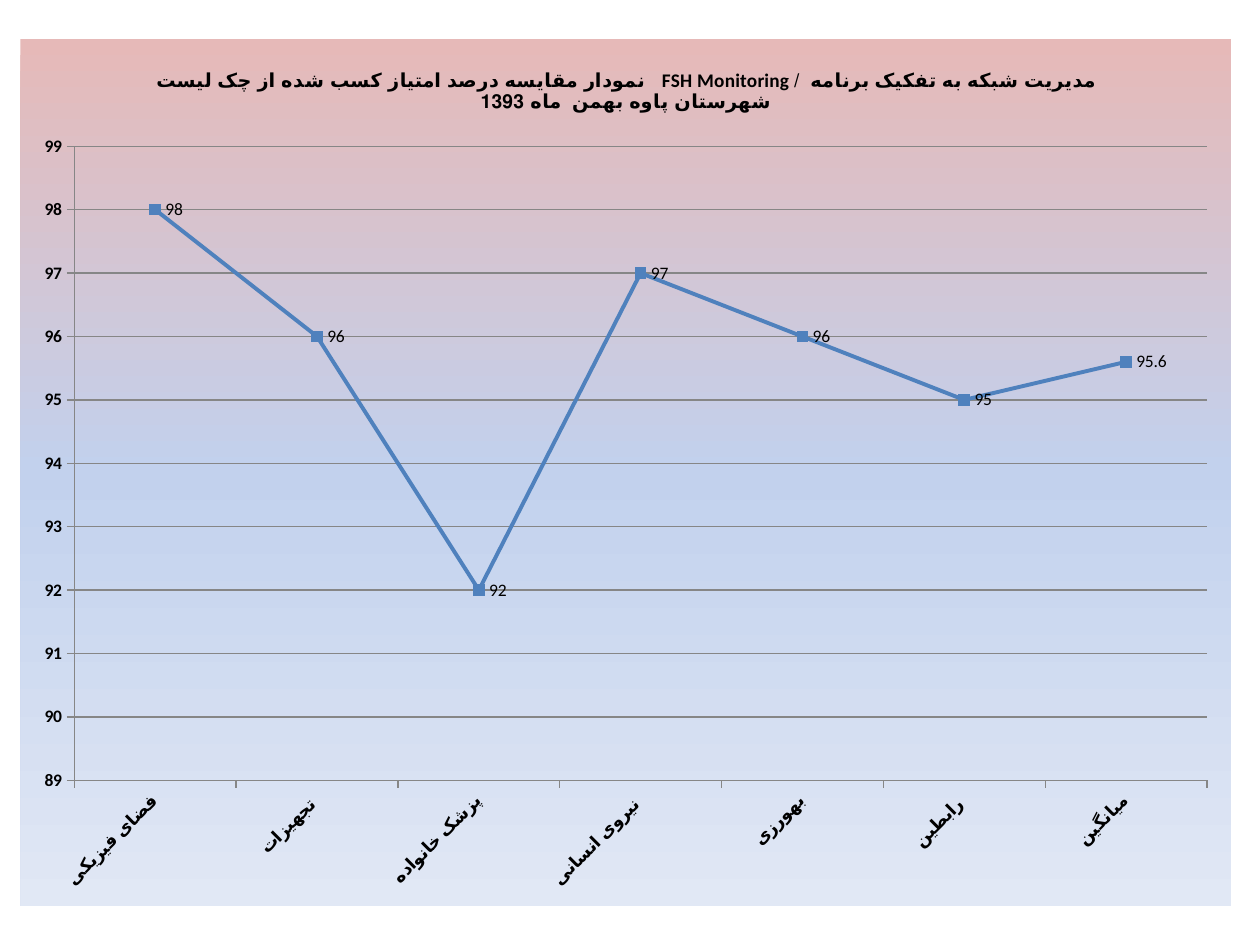
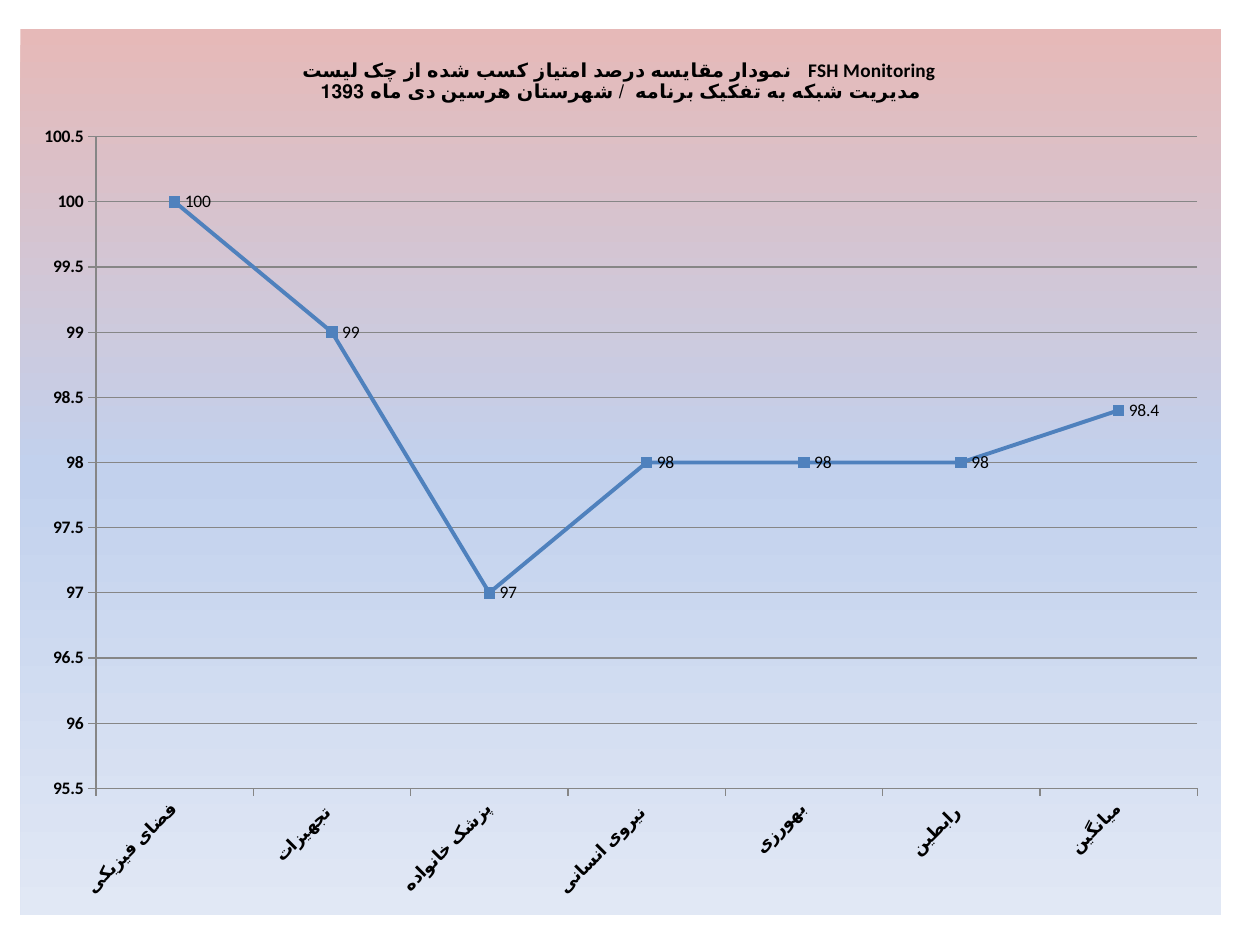
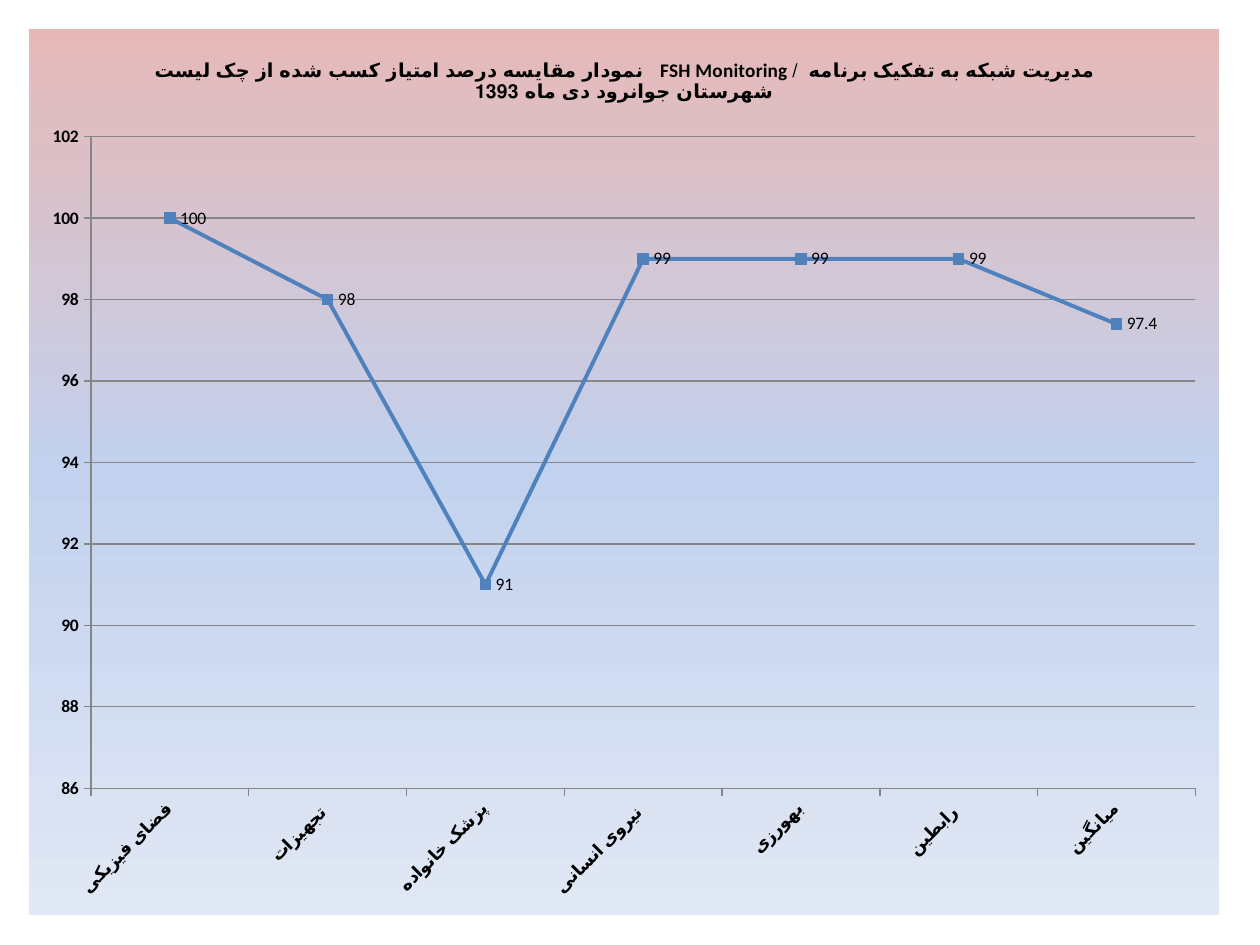
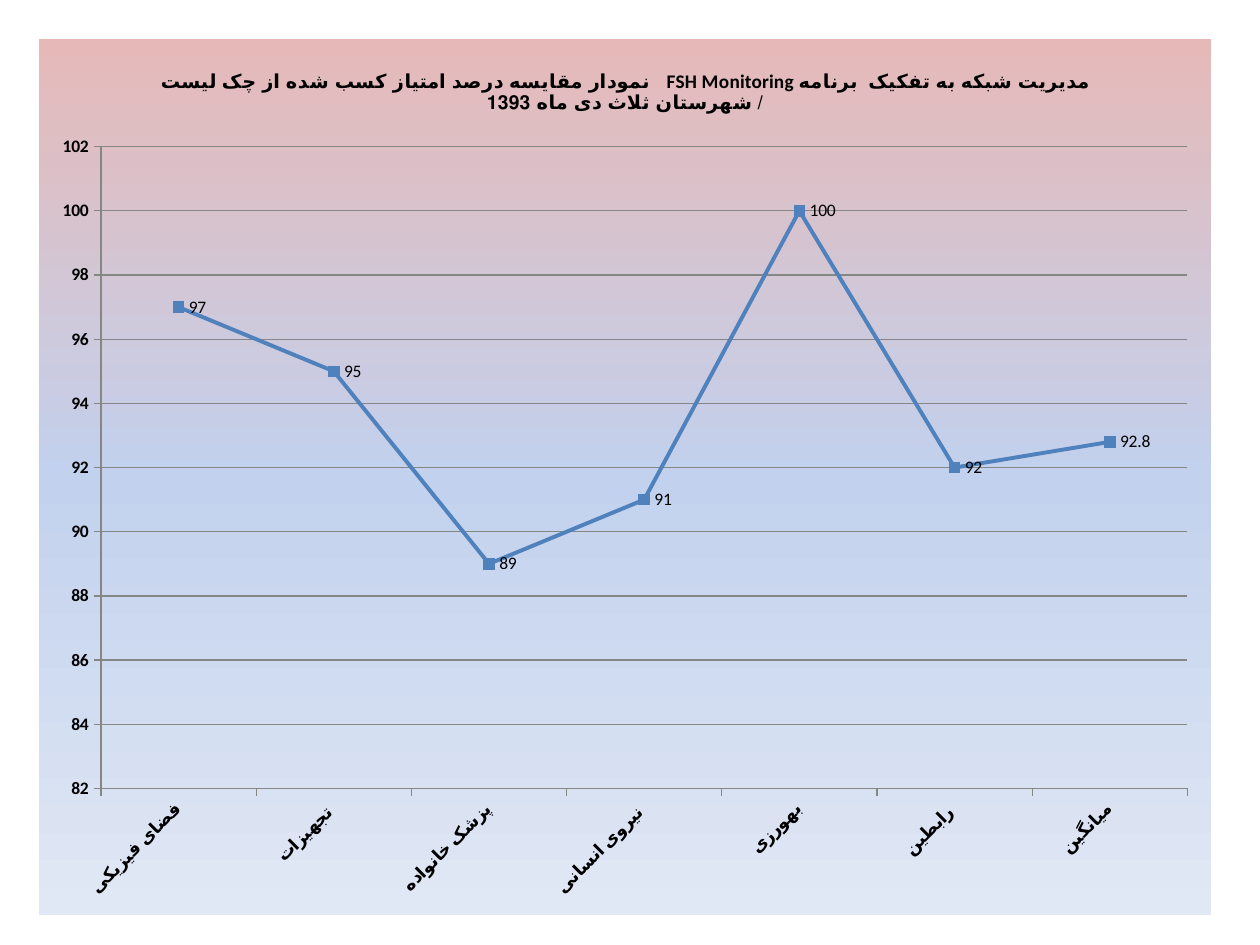
from lxml import etree
from pptx import Presentation
from pptx.chart.data import CategoryChartData as Data
from pptx.dml.color import RGBColor as RGB
from pptx.enum.chart import (XL_CHART_TYPE as Kind, XL_LABEL_POSITION as Spot,
                             XL_MARKER_STYLE as Mark, XL_TICK_MARK as Tick)
from pptx.oxml import parse_xml
from pptx.oxml.ns import nsdecls
from pptx.util import Cm, Pt

FONT = "Calibri"
BLACK, BLUE, GREY = "000000", "4F81BD", "868686"
STOPS = [(0, "E6B9B8"), (50, "C2D1ED"), (100, "E1E8F5")]

CATS = ["فضای فیزیکی", "تجهیزات ", "پزشک خانواده", "نیروی انسانی ",
        "بهورزی", "رابطین ", "میانگین"]
LEAD = "نمودار مقایسه درصد امتیاز کسب شده از چک لیست   FSH Monitoring "
TAIL = "مدیریت شبکه به تفکیک برنامه  / شهرستان "

# box in cm, town and month, title broken in two, scores, (low, high, step)
PAGES = [
    ((0.41, 0.79, 24.41, 17.48), "پاوه بهمن  ماه 1393", False,
     [98, 96, 92, 97, 96, 95, 95.6], (89, 99, 1)),
    ((0.41, 0.58, 24.21, 17.86), "هرسین دی ماه 1393", True,
     [100, 99, 97, 98, 98, 98, 98.4], (95.5, 100.5, 0.5)),
    ((0.58, 0.58, 24, 17.86), "جوانرود دی ماه 1393", False,
     [100, 98, 91, 99, 99, 99, 97.4], (86, 102, 2)),
    ((0.79, 0.79, 23.62, 17.65), "ثلاث دی ماه 1393", False,
     [97, 95, 89, 91, 100, 92, 92.8], (82, 102, 2)),
]


def tint(code):
    return RGB.from_string(code)


def style(font, size, bold=False):
    font.name, font.size, font.bold = FONT, Pt(size), bold
    font.color.rgb = tint(BLACK)


def stroke(line, code, width):
    line.color.rgb = tint(code)
    line.width = Pt(width)


def shade(chart):
    """Give the chart its gradient ground and leave the plot area clear."""
    stops = "".join(f'<a:gs pos="{at * 1000}"><a:srgbClr val="{code}"/></a:gs>'
                    for at, code in STOPS)
    ground = parse_xml(
        f'<c:spPr {nsdecls("c", "a")}><a:gradFill><a:gsLst>{stops}</a:gsLst>'
        '<a:lin ang="5400000" scaled="0"/></a:gradFill>'
        '<a:ln><a:noFill/></a:ln></c:spPr>')
    clear = parse_xml(f'<c:spPr {nsdecls("c", "a")}><a:noFill/></c:spPr>')
    root = chart.element.find("c:chart", chart.element.nsmap)
    root.addnext(ground)
    root.find("c:plotArea", root.nsmap).append(clear)


def head(chart, town, split):
    chart.has_title = True
    title = chart.chart_title
    title.include_in_layout = False
    frame = title.text_frame
    para = frame.paragraphs[0]
    for part in (LEAD, TAIL + town):
        run = para.add_run()
        run.text = part
        style(run.font, 11, True)
        if split and part == LEAD:
            para = frame.add_paragraph()


def axes(chart, scale):
    cat, val = chart.category_axis, chart.value_axis
    for axis in (cat, val):
        axis.major_tick_mark, axis.minor_tick_mark = Tick.OUTSIDE, Tick.NONE
        style(axis.tick_labels.font, 10, True)
        stroke(axis.format.line, GREY, 0.75)
    slant = cat.tick_labels.font._element.getroottree().getroot().find(
        ".//c:catAx/c:txPr/a:bodyPr", parse_xml(f'<a:p {nsdecls("a", "c")}/>').nsmap)
    slant.set("rot", "-2700000")
    slant.set("vert", "horz")
    val.minimum_scale, val.maximum_scale, val.major_unit = scale
    val.has_major_gridlines = True
    stroke(val.major_gridlines.format.line, GREY, 0.75)


def curve(plot):
    plot.vary_by_categories = False
    row = plot.series[0]
    row.smooth = False
    stroke(row.format.line, BLUE, 2.25)
    mark = row.marker
    mark.style, mark.size = Mark.SQUARE, 6
    mark.format.fill.solid()
    mark.format.fill.fore_color.rgb = tint(BLUE)
    mark.format.line.color.rgb = tint(BLUE)
    tags = row.data_labels
    tags.show_value, tags.position = True, Spot.RIGHT
    style(tags.font, 10)


def page(slide, box, town, split, scores, scale):
    data = Data(number_format="General")
    data.categories = CATS
    data.add_series("Series 1", scores)
    chart = slide.shapes.add_chart(
        Kind.LINE_MARKERS, *map(Cm, box), data).chart
    chart.has_legend = False
    style(chart.font, 10)
    head(chart, town, split)
    axes(chart, scale)
    curve(chart.plots[0])
    shade(chart)


def main():
    deck = Presentation()
    deck.slide_width, deck.slide_height = Cm(25.4), Cm(19.05)
    for facts in PAGES:
        page(deck.slides.add_slide(deck.slide_layouts[6]), *facts)
    deck.save("out.pptx")


if __name__ == "__main__":
    main()
